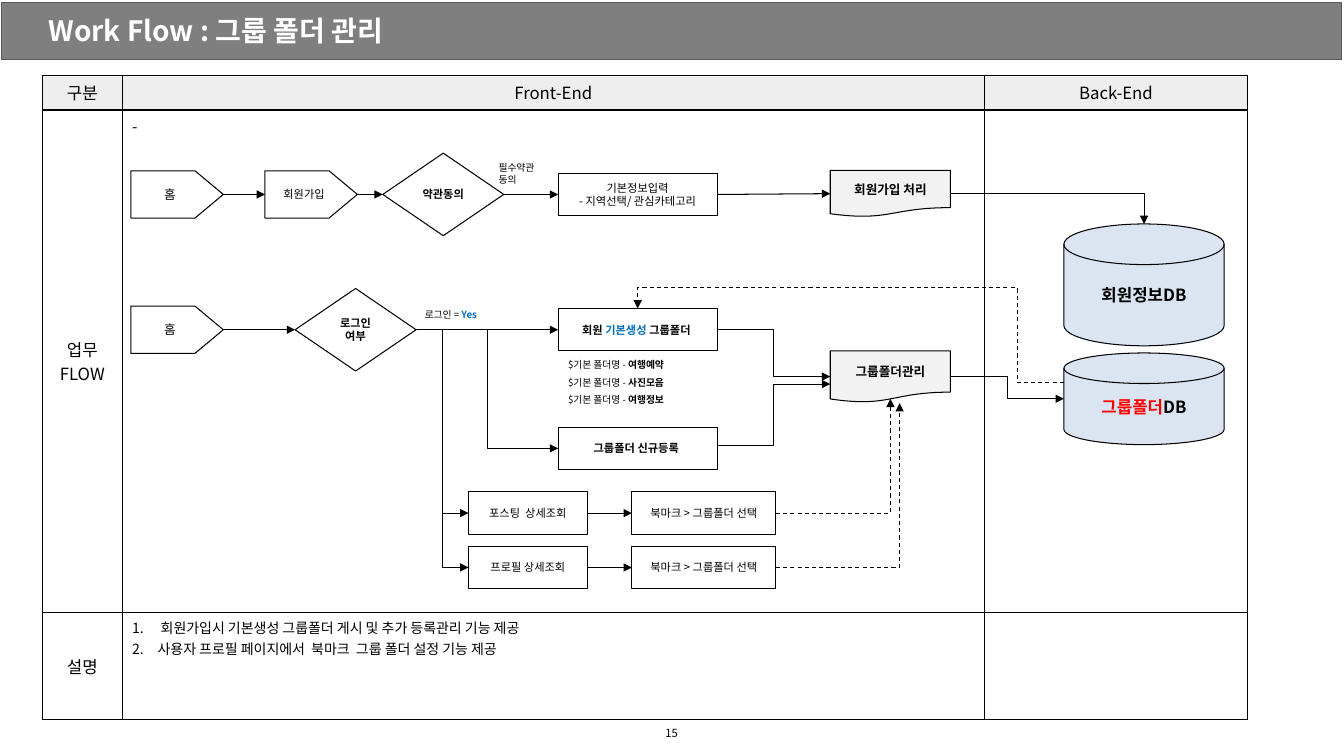
from dataclasses import dataclass

from lxml.etree import SubElement
from pptx import Presentation
from pptx.dml.color import RGBColor
from pptx.enum.dml import MSO_LINE
from pptx.enum.shapes import MSO_CONNECTOR as Link, MSO_SHAPE as Kind
from pptx.enum.text import MSO_ANCHOR as Anchor, MSO_AUTO_SIZE as AutoSize, PP_ALIGN as Align
from pptx.oxml.ns import qn
from pptx.util import Cm, Pt

TOP, LEFT, BOTTOM, RIGHT = range(4)


@dataclass(frozen=True)
class Theme:
    font: str = "Noto Sans CJK KR"
    plate_font: str = "Arial"
    ink: str = "000000"
    white: str = "FFFFFF"
    bar: str = "7F7F7F"
    bar_edge: str = "595959"
    header: str = "EEEEEE"
    document: str = "F2F2F2"
    disk: str = "DAE5F1"
    blue: str = "0070C0"
    red: str = "FF0000"
    title: float = 20
    head: float = 12
    dash: float = 11
    body: float = 10
    document_text: float = 9
    step: float = 8
    note: float = 7
    line: float = 0.75
    border: float = 1


class FlowSlide:
    def __init__(self, theme, slide):
        self.theme, self.slide = theme, slide

    def add_lines(self, frame, lines, size, bold=False, color=None, font=None,
                  align=Align.CENTER, spacing=None):
        """Each line is a list of runs; a run is a text or (text, bold, color)."""
        for number, runs in enumerate(lines):
            paragraph = frame.add_paragraph() if number else frame.paragraphs[0]
            paragraph.alignment = align
            if spacing:
                paragraph.line_spacing = spacing
            for part in [runs] if isinstance(runs, str) else runs:
                text, strong, tint = (part, bold, color) if isinstance(part, str) else part
                run = paragraph.add_run()
                run.text = text
                run.font.size, run.font.bold = Pt(size), strong
                run.font.name = font or self.theme.font
                run.font.color.rgb = RGBColor.from_string(tint or self.theme.ink)
                SubElement(run.font._element, qn("a:ea"), typeface=self.theme.font)

    def title(self, text):
        title = self.slide.shapes.title
        title.left, title.top, title.width, title.height = Cm(0.74), 0, Cm(32.41), Cm(1.52)
        frame = title.text_frame
        frame.auto_size, frame.vertical_anchor = AutoSize.NONE, Anchor.MIDDLE
        frame.margin_left, frame.margin_right = Cm(0.48), Cm(0.28)
        frame.margin_top = frame.margin_bottom = Cm(0.15)
        self.add_lines(frame, [text], self.theme.title, True, self.theme.white, align=Align.LEFT)
        return title

    def node(self, kind, left, middle, width, height, lines=(), size=None, fill=None,
             edge=None, **style):
        """A preset shape placed by its left edge and vertical middle."""
        shape = self.slide.shapes.add_shape(
            kind, Cm(left), Cm(middle - height / 2), Cm(width), Cm(height))
        shape.shadow.inherit = False
        if fill:
            shape.fill.solid()
            shape.fill.fore_color.rgb = RGBColor.from_string(fill)
        else:
            shape.fill.background()
        shape.line.color.rgb = RGBColor.from_string(edge or self.theme.ink)
        shape.line.width = Pt(self.theme.line)
        frame = shape.text_frame
        frame.word_wrap, frame.vertical_anchor = True, Anchor.MIDDLE
        if kind == Kind.PENTAGON:
            shape.adjustments[0] = 0.6
        if kind == Kind.FLOWCHART_DECISION:
            frame.margin_left = frame.margin_right = Cm(0.1)
        self.add_lines(frame, lines, size or self.theme.step, **style)
        return shape

    def plate(self, left, middle, text, size):
        return self.node(Kind.PENTAGON, left, middle, 2.33, 1.19, [text], size,
                         font=self.theme.plate_font)

    def decision(self, left, middle, *lines):
        return self.node(Kind.FLOWCHART_DECISION, left, middle, 3.05, 2.08, lines,
                         fill=self.theme.white, bold=True)

    def step(self, left, middle, width, *lines, bold=False):
        return self.node(Kind.FLOWCHART_PROCESS, left, middle, width, 1.07, lines, bold=bold)

    def document(self, middle, height, text):
        return self.node(Kind.FLOWCHART_DOCUMENT, 20.93, middle, 3.03, height, [text],
                         self.theme.document_text, self.theme.document, bold=True)

    def disk(self, middle, height, *runs):
        return self.node(Kind.FLOWCHART_MAGNETIC_DISK, 26.82, middle, 4.04, height, [runs],
                         self.theme.head, self.theme.disk, bold=True)

    def label(self, left, top, width, height, lines, size, **style):
        box = self.slide.shapes.add_textbox(Cm(left), Cm(top), Cm(width), Cm(height))
        box.text_frame.word_wrap, box.text_frame.vertical_anchor = True, Anchor.MIDDLE
        self.add_lines(box.text_frame, lines, size, **style)

    def port(self, end):
        """Position and connection site of (shape, side), or of a free (x, y) in cm."""
        shape, side = end
        if isinstance(shape, (int, float)):
            return Cm(shape), Cm(side), None
        depth = 0.93 if shape.auto_shape_type == Kind.FLOWCHART_DOCUMENT else 1
        across, down = ((0.5, 0), (0, 0.5), (0.5, depth), (1, 0.5))[side]
        # A disk has one more site, ahead of its top
        site = side + (shape.auto_shape_type == Kind.FLOWCHART_MAGNETIC_DISK)
        return (shape.left + int(shape.width * across),
                shape.top + int(shape.height * down), site)

    def arrow(self, begin, end, bend=None, adjust=(), dashed=False):
        (x1, y1, site1), (x2, y2, site2) = self.port(begin), self.port(end)
        kind = Link.ELBOW if bend else Link.STRAIGHT
        arrow = self.slide.shapes.add_connector(kind, x1, y1, x2, y2)
        if site1 is not None:
            arrow.begin_connect(begin[0], site1)
        if site2 is not None:
            arrow.end_connect(end[0], site2)
        arrow.begin_x, arrow.begin_y, arrow.end_x, arrow.end_y = x1, y1, x2, y2
        arrow.line.color.rgb = RGBColor.from_string(self.theme.ink)
        arrow.line.width = Pt(self.theme.line)
        if dashed:
            arrow.line.dash_style = MSO_LINE.DASH
        properties = arrow.element.spPr
        SubElement(properties.find(qn("a:ln")), qn("a:tailEnd"), type="triangle")
        SubElement(properties, qn("a:effectLst"))
        if bend:
            geometry = properties.find(qn("a:prstGeom"))
            geometry.set("prst", f"bentConnector{bend}")
            for number, value in enumerate(adjust, 1):
                SubElement(geometry.find(qn("a:avLst")), qn("a:gd"),
                           name=f"adj{number}", fmla=f"val {round(value * 100000)}")

    def table(self, left, top, columns, rows):
        grid = self.slide.shapes.add_table(
            len(rows), len(columns), Cm(left), Cm(top), Cm(sum(columns)), Cm(sum(rows))).table
        for column, width in zip(grid.columns, columns):
            column.width = Cm(width)
        for row, height in zip(grid.rows, rows):
            row.height = Cm(height)
        for cell in grid.iter_cells():
            for side in ("lnL", "lnR", "lnT", "lnB"):
                border = SubElement(cell._tc.get_or_add_tcPr(), qn(f"a:{side}"),
                                    w=str(Pt(self.theme.border)))
                SubElement(SubElement(border, qn("a:solidFill")), qn("a:srgbClr"),
                           val=self.theme.ink)
            cell.fill.background()
        return grid


def main():
    deck = Presentation()
    deck.slide_width, deck.slide_height = Cm(33.88), Cm(19.05)
    theme = Theme()
    flow = FlowSlide(theme, deck.slides.add_slide(deck.slide_layouts[5]))

    # Title bar, behind the title
    title = flow.title("Work Flow : 그룹 폴더 관리")
    bar = flow.node(Kind.RECTANGLE, 0.05, 0.78, 33.78, 1.45, fill=theme.bar, edge=theme.bar_edge)
    title.element.addprevious(bar.element)

    # Table frame
    grid = flow.table(1.07, 1.9, (2.01, 21.74, 6.63), (0.87, 12.67, 2.69))
    centred = {(0, 0): ["구분"], (0, 1): ["Front-End"], (0, 2): ["Back-End"],
               (1, 0): ["업무", "FLOW"], (2, 0): ["설명"]}
    for (row, column), lines in centred.items():
        cell = grid.cell(row, column)
        cell.vertical_anchor = Anchor.MIDDLE
        flow.add_lines(cell.text_frame, lines, theme.head)
        if row == 0:
            cell.fill.solid()
            cell.fill.fore_color.rgb = RGBColor.from_string(theme.header)
    flow.add_lines(grid.cell(1, 1).text_frame, ["-"], theme.dash, align=Align.LEFT)
    notes = grid.cell(2, 1).text_frame
    flow.add_lines(notes, [" 회원가입시 기본생성 그룹폴더 게시 및 추가 등록관리 기능 제공",
                           "사용자 프로필 페이지에서  북마크  그룹 폴더 설정 기능 제공"],
                   theme.body, align=Align.LEFT)
    for note in notes.paragraphs:
        numbering = note._p.get_or_add_pPr()
        numbering.set("marL", str(Cm(0.64)))
        numbering.set("indent", str(-Cm(0.64)))
        SubElement(numbering, qn("a:buFont"), typeface="+mj-lt")
        SubElement(numbering, qn("a:buAutoNum"), type="arabicPeriod")
    flow.label(0, 17.98, 33.86, 0.99, ["15"], theme.step)

    # Sign-up flow
    signup_y, login_y, step_x, step_w = 4.9, 8.31, 14.07, 4.01
    signup_home = flow.plate(3.3, signup_y, "홈", 9)
    signup = flow.plate(6.68, signup_y, "회원가입", theme.step)
    terms = flow.decision(9.65, signup_y, "약관동의")
    basic_info = flow.step(step_x, signup_y, step_w, "기본정보입력", "- 지역선택/ 관심카테고리")
    signup_done = flow.document(4.88, 1.17, "회원가입 처리")
    member_db = flow.disk(7.18, 3.07, "회원정보DB")
    flow.label(12.32, 3.94, 1.88, 0.86, ["필수약관", "동의"], theme.note, align=Align.LEFT)

    # Group folder flow
    login_home = flow.plate(3.3, login_y, "홈", 9)
    login = flow.decision(7.44, login_y, "로그인", "여부")
    default_folder = flow.step(step_x, login_y, step_w,
                               ["회원 ", ("기본생성", True, theme.blue), " 그룹폴더 "], bold=True)
    new_folder = flow.step(step_x, 11.3, step_w, "그룹폴더 신규등록 ", bold=True)
    manage = flow.document(9.49, 1.3, "그룹폴더관리")
    folder_db = flow.disk(10.05, 2.31, ("그룹폴더", True, theme.red), "DB")
    flow.label(10.46, 7.65, 2.21, 0.56, [["로그인 = ", ("Yes", True, theme.blue)]],
               theme.note, align=Align.LEFT)
    flow.label(step_x, 8.76, step_w, 1.6,
               [["$기본 폴더명 - ", (name, True, None)] for name in ("여행예약", "사진모음", "여행정보")],
               theme.note, align=Align.LEFT, spacing=1.5)

    # Bookmark branches
    bookmark_ends = ((manage, BOTTOM), (22.68, 10.16))
    for middle, view, target in zip((12.93, 14.3), ("포스팅  상세조회", "프로필 상세조회"), bookmark_ends):
        detail = flow.step(11.81, middle, 3, view)
        bookmark = flow.step(15.93, middle, 3.63, "북마크 > 그룹폴더 선택")
        flow.arrow((login, RIGHT), (detail, LEFT), bend=3)
        flow.arrow((detail, RIGHT), (bookmark, LEFT))
        flow.arrow((bookmark, RIGHT), target, bend=2, dashed=True)

    # Straight arrows along each flow
    for chain in ((signup_home, signup, terms, basic_info, signup_done),
                  (login_home, login, default_folder)):
        for source, target in zip(chain, chain[1:]):
            flow.arrow((source, RIGHT), (target, LEFT))

    # Bent arrows
    flow.arrow((signup_done, RIGHT), (member_db, TOP), bend=2)
    flow.arrow((login, RIGHT), (new_folder, LEFT), bend=3)
    flow.arrow((default_folder, RIGHT), (manage, LEFT), bend=3)
    flow.arrow((18.08, 11.23), (20.93, 9.68), bend=3)
    flow.arrow((manage, RIGHT), (folder_db, LEFT), bend=3)
    flow.arrow((26.82, 9.65), (default_folder, TOP), bend=4, adjust=(0.11, 1.28), dashed=True)

    deck.save("out.pptx")


if __name__ == "__main__":
    main()
